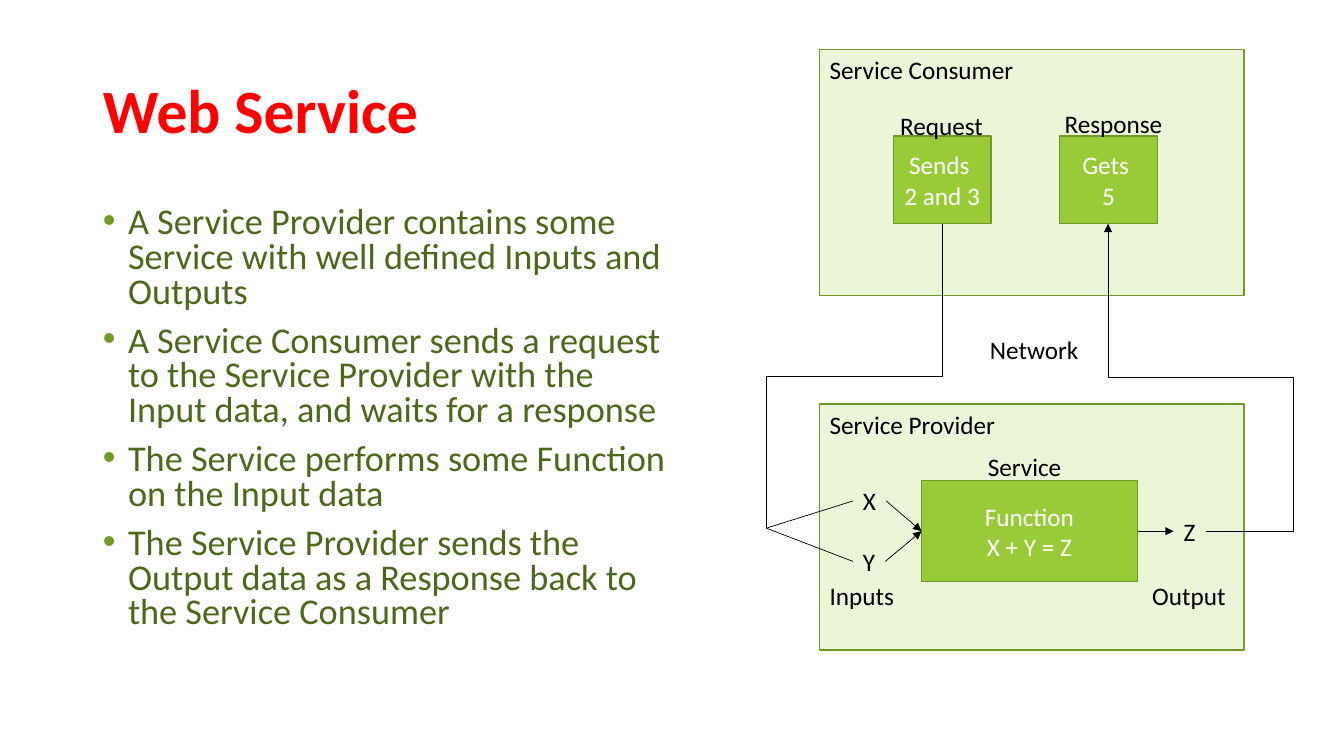
from dataclasses import dataclass

from lxml import etree
from pptx import Presentation
from pptx.dml.color import RGBColor
from pptx.enum.shapes import MSO_CONNECTOR, MSO_SHAPE
from pptx.enum.text import MSO_ANCHOR, MSO_AUTO_SIZE, PP_ALIGN
from pptx.oxml.ns import qn
from pptx.util import Inches, Pt


@dataclass(frozen=True)
class Theme:
    font: str = "Calibri"
    title: str = "FF0000"
    body: str = "4D671B"
    bullet: str = "739A28"
    panel: str = "EBF5D7"
    box: str = "99CB38"
    border: str = "719629"
    ink: str = "000000"
    light: str = "FFFFFF"
    title_size: float = 44
    body_size: float = 25.9
    label_size: float = 18
    border_width: float = 1
    wire_width: float = 0.5


THEME = Theme()

TITLE = "Web Service"
POINTS = [
    "A Service Provider contains some Service with well defined Inputs and Outputs",
    "A Service Consumer sends a request to the Service Provider with the Input data, "
    "and waits for a response",
    "The Service performs some Function on the Input data",
    "The Service Provider sends the Output data as a Response back to the Service Consumer",
]

# Panels: text, top
PANEL_LEFT, PANEL_WIDTH, PANEL_HEIGHT = 8.13, 4.21, 2.44
PANELS = [("Service Provider", 4.01), ("Service Consumer", 0.49)]

# Boxes: text, (left, top, width, height)
BOXES = [
    ("Function\nX + Y = Z", (9.14, 4.77, 2.14, 1)),
    ("Sends \n2 and 3", (8.86, 1.35, 0.97, 0.87)),
    ("Gets \n5", (10.51, 1.35, 0.97, 0.87)),
]

# Labels: text, left, top, width
LABEL_HEIGHT = 0.4
LABELS = [
    ("X", 8.46, 4.77, 0.33),
    ("Y", 8.46, 5.37, 0.32),
    ("Z", 11.64, 5.07, 0.32),
    ("Network", 9.72, 3.27, 1.09),
    ("Request", 8.83, 1.05, 1.03),
    ("Response", 10.46, 1.03, 1.18),
    ("Service", 9.7, 4.43, 0.94),
    ("Inputs", 8.13, 5.71, 0.85),
    ("Output", 11.33, 5.71, 0.94),
]

# Wires: start, end, has arrowhead
INPUT_FORK, FUNCTION_ENTRY, OUTPUT_TURN = (7.6, 5.24), (9.14, 5.27), (12.83, 5.27)
STRAIGHT_WIRES = [
    (INPUT_FORK, (8.46, 4.97), False),
    (INPUT_FORK, (8.46, 5.57), False),
    ((8.79, 4.97), FUNCTION_ENTRY, True),
    ((8.78, 5.57), FUNCTION_ENTRY, True),
    ((11.29, 5.27), (11.64, 5.27), True),
    ((11.96, 5.27), OUTPUT_TURN, False),
]
BENT_WIRES = [
    ((9.35, 2.22), INPUT_FORK, False),
    (OUTPUT_TURN, (10.99, 2.22), True),
]


def inches(values):
    return [Inches(value) for value in values]


def style_text(frame, size, color, align=PP_ALIGN.LEFT, bold=False):
    for paragraph in frame.paragraphs:
        paragraph.alignment = align
        for run in paragraph.runs:
            run.font.name = THEME.font
            run.font.size = Pt(size)
            run.font.bold = bold
            run.font.color.rgb = RGBColor.from_string(color)


def place(placeholder, bounds):
    placeholder.left, placeholder.top, placeholder.width, placeholder.height = inches(bounds)
    placeholder.text_frame.auto_size = MSO_AUTO_SIZE.NONE


def fill_title(title):
    place(title, (0.92, 0.4, 11.5, 1.45))
    frame = title.text_frame
    frame.text = TITLE
    frame.vertical_anchor = MSO_ANCHOR.MIDDLE
    frame.paragraphs[0].line_spacing = 0.9
    style_text(frame, THEME.title_size, THEME.title, bold=True)


def add_bullet(paragraph):
    properties = paragraph._p.get_or_add_pPr()
    properties.set("marL", str(Inches(0.25)))
    properties.set("indent", str(-Inches(0.25)))
    color = etree.SubElement(properties, qn("a:buClr"))
    etree.SubElement(color, qn("a:srgbClr")).set("val", THEME.bullet)
    etree.SubElement(properties, qn("a:buFont")).set("typeface", "Arial")
    etree.SubElement(properties, qn("a:buChar")).set("char", "•")


def fill_body(body):
    place(body, (0.92, 2, 5.84, 4.76))
    frame = body.text_frame
    frame.text = "\n".join(POINTS)
    for index, paragraph in enumerate(frame.paragraphs):
        add_bullet(paragraph)
        paragraph.line_spacing = 0.8
        paragraph.space_before = Pt(10 if index else 0)
    style_text(frame, THEME.body_size, THEME.body)


def add_rectangle(shapes, text, bounds, fill, color, anchor, align):
    rectangle = shapes.add_shape(MSO_SHAPE.RECTANGLE, *inches(bounds))
    rectangle.shadow.inherit = False
    rectangle.fill.solid()
    rectangle.fill.fore_color.rgb = RGBColor.from_string(fill)
    rectangle.line.color.rgb = RGBColor.from_string(THEME.border)
    rectangle.line.width = Pt(THEME.border_width)
    frame = rectangle.text_frame
    frame.text = text
    frame.vertical_anchor = anchor
    style_text(frame, THEME.label_size, color, align)


def add_label(shapes, text, left, top, width):
    label = shapes.add_textbox(*inches((left, top, width, LABEL_HEIGHT)))
    frame = label.text_frame
    frame.text = text
    frame.word_wrap = False
    frame.auto_size = MSO_AUTO_SIZE.SHAPE_TO_FIT_TEXT
    style_text(frame, THEME.label_size, THEME.ink)


def add_wire(shapes, kind, start, end, arrow):
    wire = shapes.add_connector(kind, *inches(start + end))
    wire.line.color.rgb = RGBColor.from_string(THEME.ink)
    wire.line.width = Pt(THEME.wire_width)
    if arrow:
        etree.SubElement(wire.line._get_or_add_ln(), qn("a:tailEnd")).set("type", "triangle")
    etree.SubElement(wire._element.spPr, qn("a:effectLst"))
    return wire


def add_bent_wire(shapes, start, end, arrow):
    """Turn an elbow a quarter so that it leaves and arrives vertically, going left."""
    (x1, y1), (x2, y2) = start, end
    center_x, center_y = (x1 + x2) / 2, (y1 + y2) / 2
    half_width, half_height = abs(y2 - y1) / 2, (x1 - x2) / 2
    down = y2 > y1
    rise = half_height if down else -half_height
    wire = add_wire(
        shapes, MSO_CONNECTOR.ELBOW,
        (center_x - half_width, center_y - rise),
        (center_x + half_width, center_y + rise), arrow)
    wire._element.spPr.find(qn("a:xfrm")).set("rot", str((90 if down else 270) * 60000))


def main():
    deck = Presentation()
    deck.slide_width, deck.slide_height = inches((13.33, 7.5))
    slide = deck.slides.add_slide(deck.slide_layouts[1])
    shapes = slide.shapes
    fill_title(shapes.title)
    fill_body(slide.placeholders[1])
    for text, top in PANELS:
        add_rectangle(shapes, text, (PANEL_LEFT, top, PANEL_WIDTH, PANEL_HEIGHT),
                      THEME.panel, THEME.ink, MSO_ANCHOR.TOP, PP_ALIGN.LEFT)
    for text, bounds in BOXES:
        add_rectangle(shapes, text, bounds, THEME.box, THEME.light,
                      MSO_ANCHOR.MIDDLE, PP_ALIGN.CENTER)
    for bent_wire in BENT_WIRES:
        add_bent_wire(shapes, *bent_wire)
    for straight_wire in STRAIGHT_WIRES:
        add_wire(shapes, MSO_CONNECTOR.STRAIGHT, *straight_wire)
    for label in LABELS:
        add_label(shapes, *label)
    deck.save("out.pptx")


if __name__ == "__main__":
    main()
